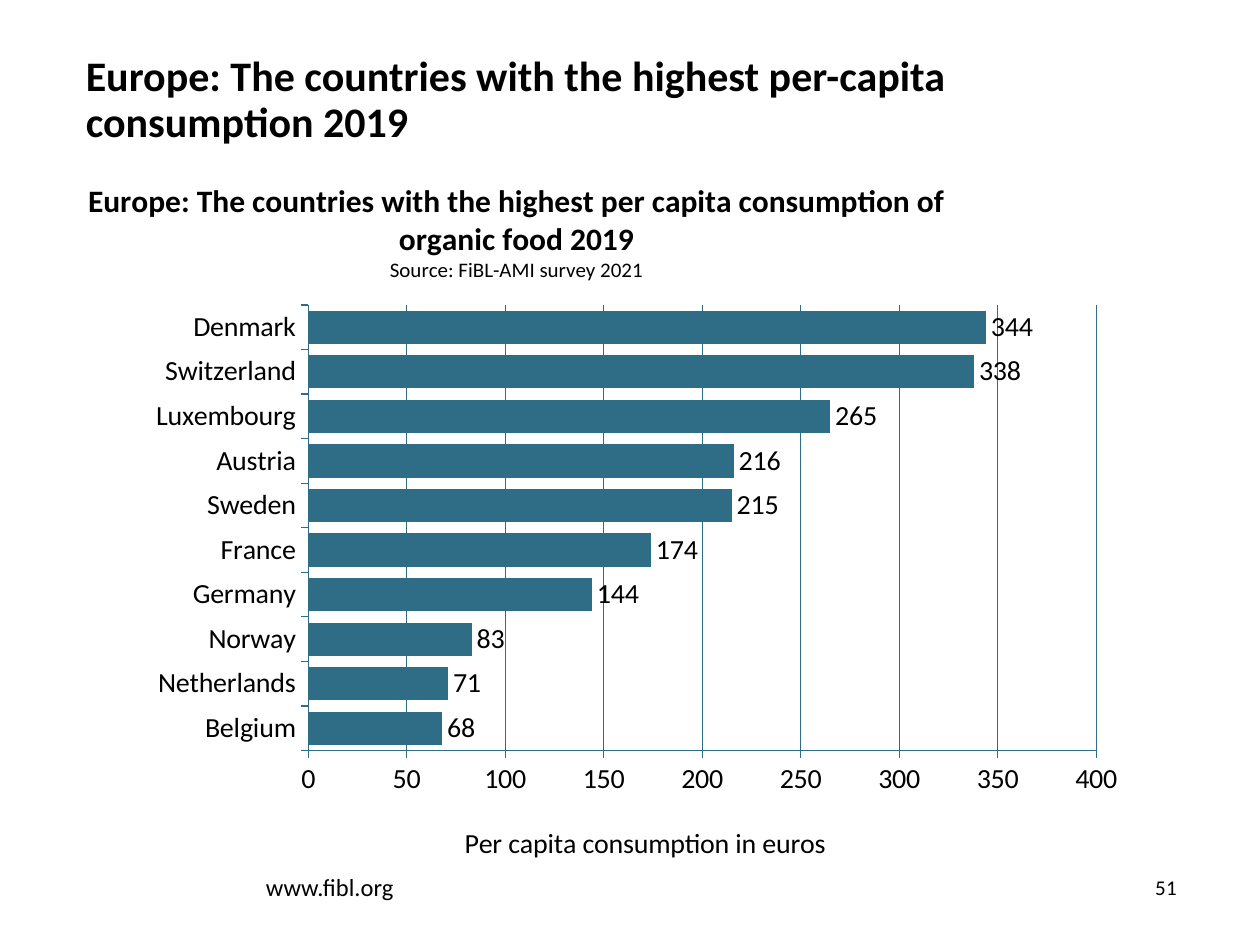
from dataclasses import dataclass

import pptx
import pptx.chart.data
import pptx.dml.color
import pptx.enum.chart
import pptx.enum.text
import pptx.oxml
import pptx.oxml.ns
import pptx.util

Pt = pptx.util.Pt
Align = pptx.enum.text.PP_ALIGN
Anchor = pptx.enum.text.MSO_ANCHOR
qn = pptx.oxml.ns.qn


@dataclass(frozen=True)
class Theme:
    font: str = "Calibri"
    ink: str = "000000"
    accent: str = "2F6C86"
    heading: int = 24
    chart_title: int = 18
    label: int = 16
    footer: int = 14
    small: int = 12
    line: float = 0.75


THEME = Theme()
CONSUMPTION = {
    "Belgium": 68, "Netherlands": 71, "Norway": 83, "Germany": 144,
    "France": 174, "Sweden": 215, "Austria": 216, "Luxembourg": 265,
    "Switzerland": 338, "Denmark": 344,
}


def color(value):
    return pptx.dml.color.RGBColor.from_string(value)


def style_font(font, size, bold=False):
    font.name = THEME.font
    font.size = Pt(size)
    font.bold = bold
    font.color.rgb = color(THEME.ink)


def place(shape, left, top, width, height):
    shape.left, shape.top = Pt(left), Pt(top)
    shape.width, shape.height = Pt(width), Pt(height)


def write(frame, text, size, bold=False, align=Align.LEFT, anchor=Anchor.BOTTOM,
          inset=3.6, line_spacing=None, tracking=None):
    frame.word_wrap = True
    frame.auto_size = pptx.enum.text.MSO_AUTO_SIZE.NONE
    frame.vertical_anchor = anchor
    frame.margin_left = frame.margin_right = 0
    frame.margin_top = frame.margin_bottom = Pt(inset)
    para = frame.paragraphs[0]
    para.alignment = align
    para.line_spacing = line_spacing
    span = para.add_run()
    span.text = text
    style_font(span.font, size, bold)
    if tracking:
        span.font._element.set("spc", str(int(tracking * 100)))


def add_text(page, bounds, text, size, **format):
    box = page.shapes.add_textbox(0, 0, 0, 0)
    place(box, *bounds)
    write(box.text_frame, text, size, **format)


def set_layout(element, index, inner=False, **fractions):
    for old in element.findall(qn("c:layout")):
        element.remove(old)
    parts = '<c:layoutTarget val="inner"/>' if inner else ""
    parts += "".join(f'<c:{key}Mode val="edge"/>' for key in ("x", "y"))
    parts += "".join(f'<c:{key} val="{value}"/>' for key, value in fractions.items())
    element.insert(index, pptx.oxml.parse_xml(
        f'<c:layout {pptx.oxml.ns.nsdecls("c")}><c:manualLayout>{parts}'
        "</c:manualLayout></c:layout>"))


def write_chart_title(title, lines, x, y):
    frame = title.text_frame
    for index, (text, size, bold) in enumerate(lines):
        para = frame.add_paragraph() if index else frame.paragraphs[0]
        style_font(para.font, size, bold)
        span = para.add_run()
        span.text = text
        style_font(span.font, size, bold)
    set_layout(title.element if hasattr(title, "element") else title._element, 1, x=x, y=y)


def style_line(line):
    line.color.rgb = color(THEME.accent)
    line.width = Pt(THEME.line)


def style_axis(axis):
    style_font(axis.tick_labels.font, THEME.label)
    style_line(axis.format.line)
    axis.major_tick_mark = pptx.enum.chart.XL_TICK_MARK.OUTSIDE
    axis.minor_tick_mark = pptx.enum.chart.XL_TICK_MARK.NONE


def add_bar_chart(page, bounds):
    data = pptx.chart.data.CategoryChartData(number_format="#,##0")
    data.categories = list(CONSUMPTION)
    data.add_series("Series 1", list(CONSUMPTION.values()))
    chart = page.shapes.add_chart(
        pptx.enum.chart.XL_CHART_TYPE.BAR_CLUSTERED,
        *map(Pt, bounds), data).chart
    style_font(chart.font, THEME.chart_title)
    chart.has_legend = False

    chart.has_title = True
    write_chart_title(chart.chart_title, [
        ("Europe: The countries with the highest per capita consumption of "
         "organic food 2019", THEME.chart_title, True),
        ("Source: FiBL-AMI survey 2021", THEME.small, False),
    ], x=0.01, y=0.02)

    plot = chart.plots[0]
    plot.gap_width = 34
    plot.vary_by_categories = False
    plot.has_data_labels = True
    labels = plot.data_labels
    labels.show_value = True
    labels.number_format = "#,##0"
    labels.number_format_is_linked = False
    labels.position = pptx.enum.chart.XL_LABEL_POSITION.OUTSIDE_END
    style_font(labels.font, THEME.label)
    fill = plot.series[0].format.fill
    fill.solid()
    fill.fore_color.rgb = color(THEME.accent)

    style_axis(chart.category_axis)
    axis = chart.value_axis
    style_axis(axis)
    axis.minimum_scale, axis.maximum_scale, axis.major_unit = 0, 400, 50
    axis.tick_labels.number_format = "#,##0"
    axis.tick_labels.number_format_is_linked = False
    axis.has_major_gridlines = True
    style_line(axis.major_gridlines.format.line)
    axis.has_title = True
    write_chart_title(axis.axis_title, [
        ("Per capita consumption in euros", THEME.label, False),
    ], x=0.35, y=0.94)

    plot_area = next(chart.element.iter(qn("c:plotArea")))
    set_layout(plot_area, 0, inner=True, x=0.213, y=0.204, w=0.714, h=0.638)


def main():
    deck = pptx.Presentation()
    deck.slide_width, deck.slide_height = Pt(720), Pt(540)
    page = deck.slides.add_slide(deck.slide_layouts[5])
    add_text(page, (152, 494, 215, 24.5), "www.fibl.org", THEME.footer)
    title = page.shapes.title
    place(title, 49, 31.7, 622.8, 49.7)
    write(title.text_frame,
          "Europe: The countries with the highest per-capita consumption 2019",
          THEME.heading, bold=True, anchor=Anchor.TOP, inset=0, line_spacing=0.9)
    add_text(page, (610, 489.6, 62.5, 28), "51", THEME.small,
             align=Align.RIGHT, tracking=0.2)
    add_bar_chart(page, (41.8, 92.9, 630.7, 403.9))
    deck.save("out.pptx")


if __name__ == "__main__":
    main()
